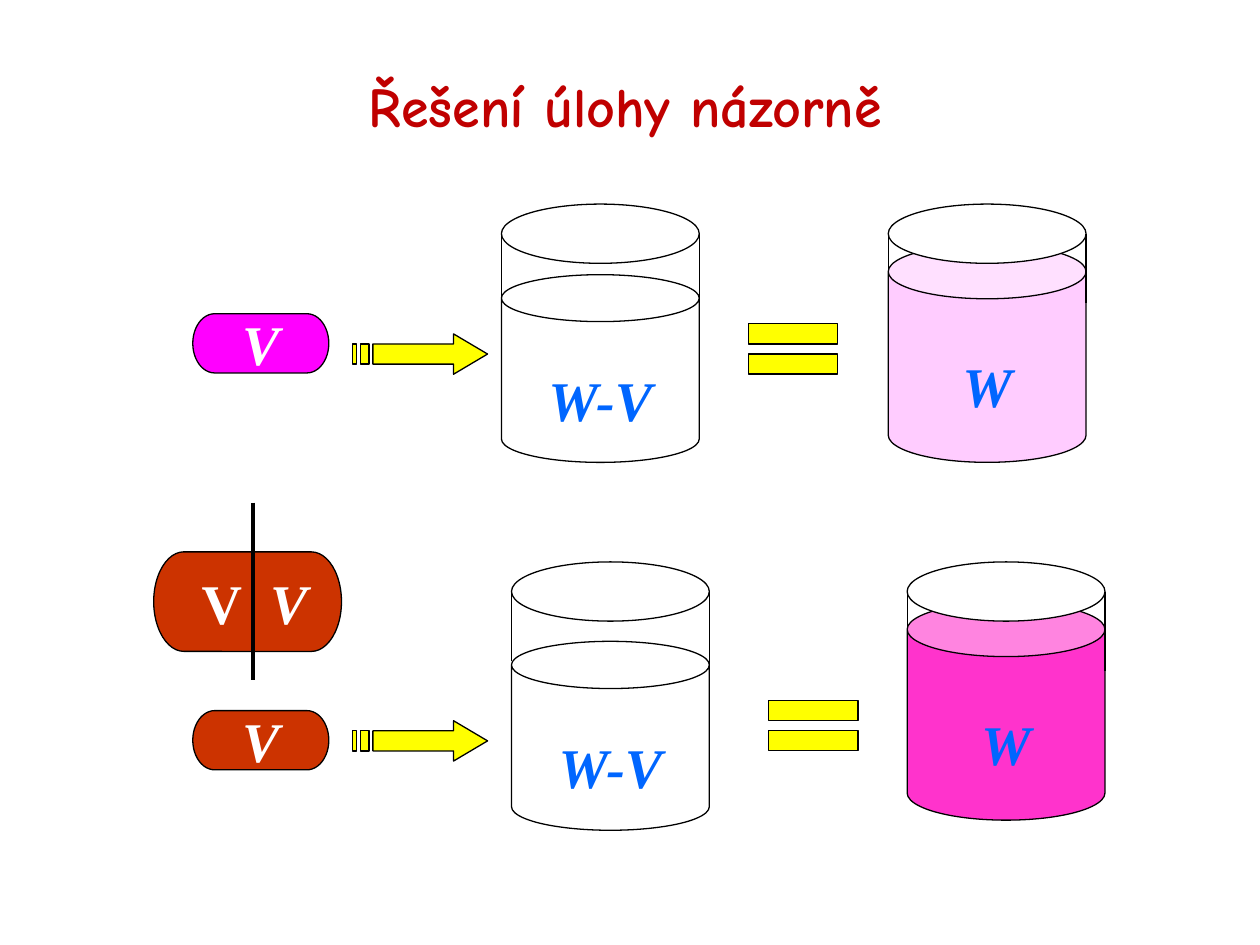
import dataclasses

import pptx
import pptx.dml.color
import pptx.enum.shapes
import pptx.enum.text
import pptx.oxml
import pptx.oxml.ns
import pptx.util

Inches = pptx.util.Inches
Pt = pptx.util.Pt
Shape = pptx.enum.shapes.MSO_SHAPE
Anchor = pptx.enum.text.MSO_ANCHOR
Align = pptx.enum.text.PP_ALIGN


@dataclasses.dataclass(frozen=True)
class Theme:
    title_font: str = "Comic Neue"
    label_font: str = "Times New Roman"
    size: int = 32
    thin: float = 0.75
    thick: float = 2
    title: str = "C00000"
    label: str = "0066FF"
    white: str = "FFFFFF"
    black: str = "000000"
    yellow: str = "FFFF00"
    magenta: str = "FF00FF"
    brown: str = "CC3300"
    pale_pink: str = "FFCCFF"
    hot_pink: str = "FF33CC"


THEME = Theme()


def rgb(value):
    return pptx.dml.color.RGBColor.from_string(value)


def format_font(font, color, **values):
    values = {"size": Pt(THEME.size), "name": THEME.label_font, "bold": True, **values}
    for name, value in values.items():
        setattr(font, name, value)
    font.color.rgb = rgb(color)


def paint(shape, fill):
    shape.shadow.inherit = False
    shape.fill.solid()
    shape.fill.fore_color.rgb = rgb(fill)
    shape.line.color.rgb = rgb(THEME.black)
    shape.line.width = Pt(THEME.thin)


def add_shape(slide, kind, box, fill):
    shape = slide.shapes.add_shape(kind, *map(Inches, box))
    paint(shape, fill)
    return shape


def add_vertical_line(slide, x, top, bottom, width=THEME.thin):
    line = slide.shapes.add_connector(
        pptx.enum.shapes.MSO_CONNECTOR.STRAIGHT,
        Inches(x), Inches(top), Inches(x), Inches(bottom))
    line.line.color.rgb = rgb(THEME.black)
    line.line.width = Pt(width)
    properties = line._element.spPr
    properties.append(pptx.oxml.parse_xml(
        f"<a:effectLst {pptx.oxml.ns.nsdecls('a')}/>"))


def write_label(shape, runs, color):
    """Centre runs of (text, italic) in the shape."""
    frame = shape.text_frame
    frame.word_wrap = False
    frame.vertical_anchor = Anchor.MIDDLE
    paragraph = frame.paragraphs[0]
    paragraph.alignment = Align.CENTER
    for text, italic in runs:
        run = paragraph.add_run()
        run.text = text
        format_font(run.font, color, italic=italic)
    return paragraph


def add_title(slide, box, text):
    title = slide.shapes.title
    title.left, title.top, title.width, title.height = map(Inches, box)
    title.text_frame.vertical_anchor = Anchor.MIDDLE
    paragraph = title.text_frame.paragraphs[0]
    paragraph.alignment = Align.CENTER
    run = paragraph.add_run()
    run.text = text
    format_font(run.font, THEME.title, name=THEME.title_font)


def add_beaker(slide, box, level, liquid, curve, label, wall_lengths):
    """Draw a beaker filled up to `level` inches below its rim."""
    left, top, width, height = box
    rim_height = 0.47
    can = add_shape(slide, Shape.CAN, (left, top + level, width, height - level), liquid)
    can.adjustments[0] = curve
    can.text_frame.margin_top = Inches(0.34)
    write_label(can, [(label, True)], THEME.label)
    add_shape(slide, Shape.OVAL, (left, top, width, rim_height), THEME.white)
    wall_top = top + rim_height / 2
    for x, length in zip((left, left + width), wall_lengths):
        add_vertical_line(slide, x, wall_top, wall_top + length)


def add_tablet(slide, box, fill):
    tablet = add_shape(slide, Shape.FLOWCHART_TERMINATOR, box, fill)
    write_label(tablet, [("V", True)], THEME.white)


def add_double_tablet(slide, box, fill):
    left, top, width, height = box
    tablet = add_shape(slide, Shape.FLOWCHART_TERMINATOR, box, fill)
    tablet.text_frame.margin_left = Inches(0.21)
    paragraph = write_label(
        tablet, [("V", False), (" ", False), ("V", True)], THEME.white)
    # Widen the single space so that the dividing line fits between the letters
    paragraph.runs[1]._r.get_or_add_rPr().set("spc", "800")
    overhang = 0.31
    add_vertical_line(slide, left + 0.79, top - 0.39, top + height - 0.08 + overhang,
                      THEME.thick)


def add_striped_arrow(slide, box):
    left, top, width, height = box
    middle, right = top + height / 2, left + width
    upper, lower = top + height / 4, top + height * 3 / 4
    neck, shaft = right - 0.27, left + 0.16
    outlines = [[(neck, top), (neck, upper), (shaft, upper), (shaft, lower),
                 (neck, lower), (neck, top + height), (right, middle)]]
    for start, end in ((0.06, 0.13), (0, 0.03)):
        outlines.append([(left + start, upper), (left + start, lower),
                         (left + end, lower), (left + end, upper)])
    builder = slide.shapes.build_freeform(
        Inches(outlines[0][0][0]), Inches(outlines[0][0][1]))
    for index, outline in enumerate(outlines):
        points = [(Inches(x), Inches(y)) for x, y in outline]
        if index:
            builder.move_to(*points[0])
        builder.add_line_segments(points[1:], close=True)
    paint(builder.convert_to_shape(), THEME.yellow)


def add_equals(slide, box):
    left, top, width, height = box
    bar = 0.16
    for y in (top, top + height - bar):
        add_shape(slide, Shape.RECTANGLE, (left, y, width, bar), THEME.yellow)


def add_experiment(slide, top, tablet, arrow_top, equals, beakers, wall_lengths):
    """Draw one row: tablet, arrow, beaker, equals sign, beaker."""
    for left, level, liquid, curve, label in beakers:
        add_beaker(slide, (left, top, 1.57, 2.05 if level < 0.6 else 2.13),
                   level, liquid, curve, label, wall_lengths)
    tablet_top, tablet_fill = tablet
    add_tablet(slide, (1.53, tablet_top, 1.08, 0.47), tablet_fill)
    add_striped_arrow(slide, (2.8, arrow_top, 1.07, 0.32))
    add_equals(slide, (*equals, 0.71, 0.4))


def main():
    presentation = pptx.Presentation()
    presentation.slide_width = Inches(10)
    presentation.slide_height = Inches(7.5)
    slide = presentation.slides.add_slide(presentation.slide_layouts[5])
    add_title(slide, (0.28, 0.44, 9.37, 0.79), "Řešení úlohy názorně")
    add_experiment(
        slide, 1.62, (2.49, THEME.magenta), 2.65, (5.94, 2.57),
        [(3.98, 0.56, THEME.white, 0.25, "W-V"),
         (7.05, 0.32, THEME.pale_pink, 0.275, "W")],
        (0.63, 0.55))
    add_experiment(
        slide, 4.46, (5.64, THEME.brown), 5.72, (6.1, 5.56),
        [(4.06, 0.63, THEME.white, 0.25, "W-V"),
         (7.2, 0.32, THEME.hot_pink, 0.275, "W")],
        (0.55, 0.63))
    add_double_tablet(slide, (1.22, 4.38, 1.49, 0.79), THEME.brown)
    presentation.save("out.pptx")


if __name__ == "__main__":
    main()
